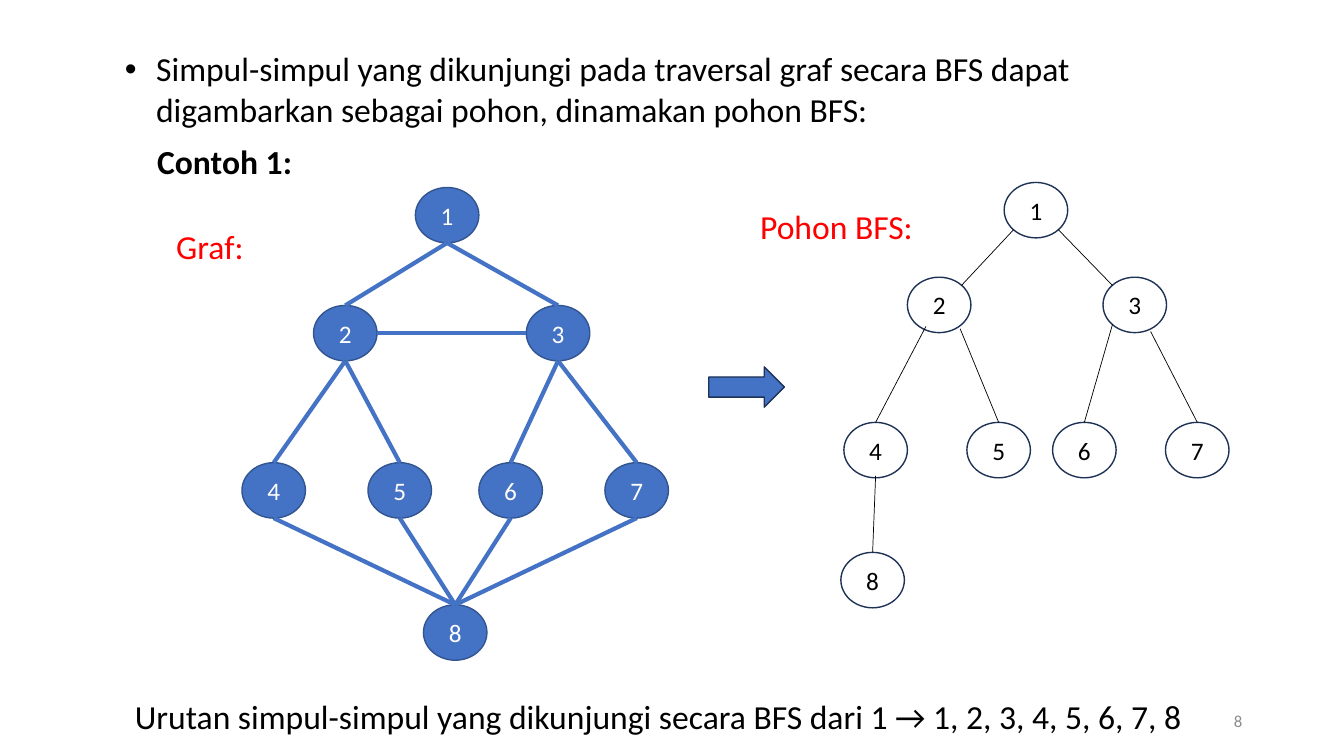
from dataclasses import dataclass

from lxml import etree
from pptx import Presentation
from pptx.dml.color import RGBColor
from pptx.enum.shapes import MSO_CONNECTOR, MSO_SHAPE as SHAPE
from pptx.enum.text import MSO_ANCHOR as ANCHOR, PP_ALIGN as ALIGN
from pptx.oxml.ns import qn
from pptx.util import Inches, Pt


@dataclass(frozen=True)
class Theme:
    font: str = "Calibri"
    body_size: int = 24
    node_size: int = 18
    number_size: int = 12
    black: str = "000000"
    white: str = "FFFFFF"
    red: str = "FF0000"
    gray: str = "8C8C8C"
    blue: str = "4472C4"
    blue_edge: str = "325491"
    navy: str = "1E3256"


@dataclass(frozen=True)
class NodeStyle:
    fill: str
    outline: str
    text: str
    edge: str
    edge_width: float


THEME = Theme()
GRAPH_STYLE = NodeStyle(THEME.blue, THEME.blue_edge, THEME.white, THEME.blue, 3)
TREE_STYLE = NodeStyle("", THEME.navy, THEME.black, THEME.black, 0.5)
NODE_W, NODE_H = 0.63, 0.55

# Points on a node, as fractions of its width and height
TOP, BOTTOM, LEFT, RIGHT = (0.5, 0), (0.5, 1), (0, 0.5), (1, 0.5)
TOP_LEFT, TOP_RIGHT = (0.15, 0.15), (0.85, 0.15)
BOTTOM_LEFT, BOTTOM_RIGHT = (0.15, 0.85), (0.85, 0.85)

# Node places, relative to the box of the diagram
GRAPH_NODES = {1: (1.72, 0), 2: (0.71, 1.17), 3: (2.82, 1.17),
               4: (0, 2.73), 5: (1.25, 2.73), 6: (2.35, 2.73), 7: (3.6, 2.73),
               8: (1.8, 4.14)}
TREE_NODES = {1: (1.62, 0), 2: (0.66, 0.94), 3: (2.6, 0.94),
              4: (0.03, 2.38), 5: (1.25, 2.38), 6: (2.1, 2.38), 7: (3.22, 2.38),
              8: (0, 3.67)}

# Edges: parent, point on it, child, point on it
GRAPH_LINKS = [(2, 4), (2, 5), (3, 6), (3, 7), (1, 2), (1, 3),
               (6, 8), (7, 8), (4, 8), (5, 8)]
GRAPH_EDGES = [(parent, BOTTOM, child, TOP) for parent, child in GRAPH_LINKS]
GRAPH_EDGES.append((3, LEFT, 2, RIGHT))
TREE_EDGES = [(1, BOTTOM_LEFT, 2, TOP_RIGHT), (1, BOTTOM_RIGHT, 3, TOP_LEFT),
              (2, (0.29, 0.89), 4, TOP), (3, BOTTOM_LEFT, 6, TOP),
              (2, (0.83, 0.93), 5, TOP), (3, (0.75, 0.98), 7, TOP),
              (4, (0.5, 0.96), 8, TOP)]


def rgb(color):
    return RGBColor.from_string(color)


def write(frame, text, size, color, align=ALIGN.LEFT, bold=False):
    frame.text = text
    paragraph = frame.paragraphs[0]
    paragraph.alignment = align
    font = paragraph.runs[0].font
    font.name, font.size, font.bold = THEME.font, Pt(size), bold
    font.color.rgb = rgb(color)
    return paragraph


def add_label(slide, box, text, color=THEME.black, size=THEME.body_size,
              wrap=True, **options):
    frame = slide.shapes.add_textbox(*map(Inches, box)).text_frame
    frame.word_wrap = wrap
    write(frame, text, size, color, **options)
    return frame


def add_shape(slide, kind, box, fill, outline):
    shape = slide.shapes.add_shape(kind, *map(Inches, box))
    shape.shadow.inherit = False
    if fill:
        shape.fill.solid()
        shape.fill.fore_color.rgb = rgb(fill)
    else:
        shape.fill.background()
    shape.line.color.rgb = rgb(outline)
    shape.line.width = Pt(1)
    return shape


def add_edge(slide, start, end, style):
    edge = slide.shapes.add_connector(MSO_CONNECTOR.STRAIGHT,
                                      *map(Inches, (*start, *end)))
    edge.line.color.rgb = rgb(style.edge)
    edge.line.width = Pt(style.edge_width)
    etree.SubElement(edge._element.spPr, qn("a:effectLst"))


def add_diagram(slide, left, top, nodes, edges, style):
    """Numbered nodes, then the edges between them."""
    for number, (x, y) in nodes.items():
        node = add_shape(slide, SHAPE.OVAL, (left + x, top + y, NODE_W, NODE_H),
                         style.fill, style.outline)
        node.text_frame.vertical_anchor = ANCHOR.MIDDLE
        write(node.text_frame, str(number), THEME.node_size, style.text, ALIGN.CENTER)

    def place(number, point):
        x, y = nodes[number]
        return left + x + point[0] * NODE_W, top + y + point[1] * NODE_H

    for parent, leaving, child, arriving in edges:
        add_edge(slide, place(parent, leaving), place(child, arriving), style)


def add_intro(slide, left, top):
    """Bulleted statement and the example heading."""
    statement = add_label(
        slide, (left, top, 11.28, 0.91),
        "Simpul-simpul yang dikunjungi pada traversal graf secara BFS dapat "
        "digambarkan sebagai pohon, dinamakan pohon BFS:")
    statement.margin_right = Inches(0.4)
    properties = statement.paragraphs[0]._p.get_or_add_pPr()
    properties.set("marL", str(Inches(0.31)))
    properties.set("indent", str(Inches(-0.31)))
    bullet_font = etree.SubElement(properties, qn("a:buFont"))
    bullet_font.set("typeface", "Arial")
    etree.SubElement(properties, qn("a:buChar")).set("char", "•")
    add_label(slide, (left + 0.32, top + 0.92, 1.81, 0.5), "Contoh 1:", bold=True)


def add_footer(slide, left, top):
    """Visiting order and the slide number."""
    add_label(slide, (left, top, 10.77, 0.5),
              "Urutan simpul-simpul yang dikunjungi secara BFS dari 1 → "
              "1, 2, 3, 4, 5, 6, 7, 8", wrap=False)
    number = add_label(slide, (left + 8.18, top + 0.1, 3, 0.4), "8", THEME.gray,
                       THEME.number_size, align=ALIGN.RIGHT)
    number.vertical_anchor = ANCHOR.MIDDLE


def main():
    deck = Presentation()
    deck.slide_width, deck.slide_height = Inches(13.33), Inches(7.5)
    slide = deck.slides.add_slide(deck.slide_layouts[6])

    add_intro(slide, 1.14, 0.43)
    add_footer(slide, 1.24, 6.85)

    # Graph on the left, its BFS tree on the right
    add_diagram(slide, 2.4, 1.86, GRAPH_NODES, GRAPH_EDGES, GRAPH_STYLE)
    add_diagram(slide, 8.34, 1.81, TREE_NODES, TREE_EDGES, TREE_STYLE)
    add_label(slide, (1.65, 2.19, 0.94, 0.5), "Graf:", THEME.red)
    add_label(slide, (7.44, 1.99, 2.25, 0.5), "Pohon BFS:", THEME.red)
    add_shape(slide, SHAPE.RIGHT_ARROW, (7.03, 3.64, 0.75, 0.4),
              THEME.blue, THEME.navy)

    deck.save("out.pptx")


if __name__ == "__main__":
    main()
